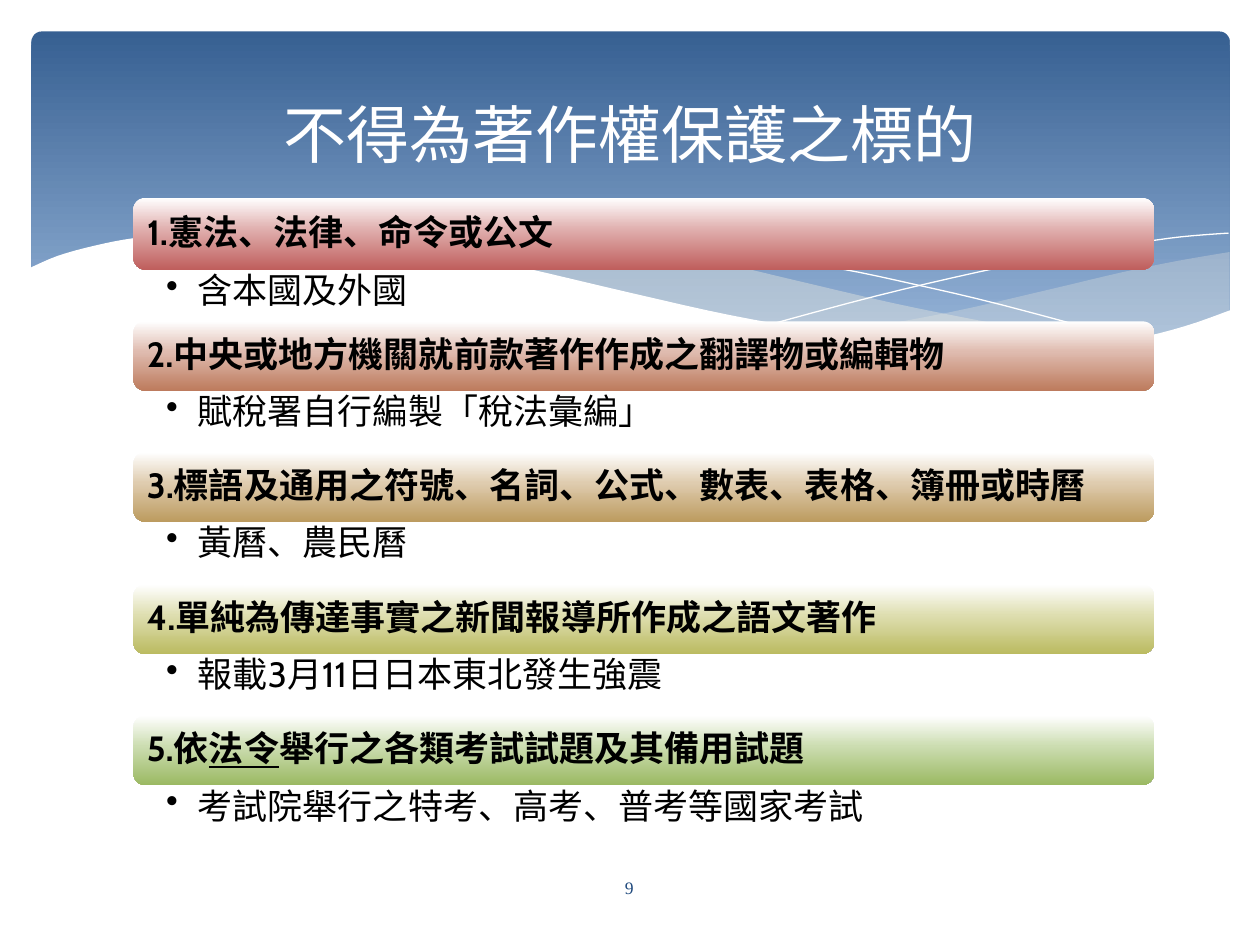
import pptx
import pptx.dml.color
import pptx.enum.shapes
import pptx.enum.text
import pptx.oxml
import pptx.oxml.ns
import pptx.util
from pptx.util import Inches

BODY_FONT = "Cabin"
CJK_FONT = "Noto Sans CJK TC"
BAR_LEFT, BAR_WIDTH = 1.06, 8.1

# top, height, heading parts (the second is underlined), detail, middle and end colour
ITEMS = [
    (1.57, 0.57, ["1.憲法、法律、命令或公文"], "含本國及外國", "E0AFAE", "BF5E5C"),
    (2.55, 0.55, ["2.中央或地方機關就前款著作作成之翻譯物或編輯物"],
     "賦稅署自行編製「稅法彙編」", "DFBBAF", "BD7B5D"),
    (3.59, 0.55, ["3.標語及通用之符號、名詞、公式、數表、表格、簿冊或時曆"],
     "黃曆、農民曆", "DFCCAF", "BC9B5F"),
    (4.64, 0.55, ["4.單純為傳達事實之新聞報導所作成之語文著作"],
     "報載3月11日日本東北發生強震", "DEDEB0", "BBBB61"),
    (5.68, 0.55, ["5.依", "法令", "舉行之各類考試試題及其備用試題"],
     "考試院舉行之特考、高考、普考等國家考試", "CCDDB1", "9BB963"),
]

RIGHT_WAVE_TOP = [(9.76, 2), (9.35, 2.07), (8.91, 2.16), (8.32, 2.3), (7.53, 2.48), (6.61, 2.65)]
RIGHT_WAVE_BOTTOM = [(6.61, 2.65), (7.05, 2.71), (7.57, 2.76), (8.03, 2.78), (8.54, 2.76),
                     (8.97, 2.7), (9.35, 2.62), (9.76, 2.47)]
LONG_WAVE_TOP = [(8.93, 2.73), (8.37, 2.65), (7.75, 2.54), (7.06, 2.4), (6.29, 2.22),
                 (5.69, 2.08), (5.14, 1.98), (4.64, 1.91), (4.2, 1.87), (3.8, 1.86),
                 (3.28, 1.87), (2.86, 1.91)]
LONG_WAVE_BOTTOM = [(2.86, 1.91), (3.42, 1.99), (4.04, 2.11), (4.91, 2.32), (5.66, 2.48),
                    (6.34, 2.61), (6.95, 2.7), (7.48, 2.76), (8.07, 2.79), (8.57, 2.77),
                    (8.93, 2.73)]
FALLING_LINE = [(3.09, 1.95), (3.43, 1.9), (3.87, 1.87), (4.5, 1.88), (5.1, 1.92), (5.82, 2),
                (6.65, 2.13), (7.27, 2.26), (7.95, 2.42), (9.07, 2.72)]
RISING_LINE = [(6.13, 2.57), (6.95, 2.35), (7.76, 2.16), (8.36, 2.04), (8.95, 1.94),
               (9.37, 1.88), (9.75, 1.85)]
WHITE_EDGE = [(9.77, 2.46), (9.4, 2.59), (8.99, 2.69), (8.5, 2.75), (8.09, 2.77), (7.61, 2.75),
              (7.08, 2.7), (6.47, 2.62), (5.79, 2.5), (5.03, 2.33), (4.18, 2.13), (3.65, 2.02),
              (3.15, 1.94), (2.71, 1.88), (2.3, 1.85), (1.93, 1.84), (1.46, 1.85), (1.06, 1.89),
              (0.75, 1.95), (0.46, 2.03), (0.23, 2.13)]


def color(value):
    return pptx.dml.color.RGBColor.from_string(value)


def smooth(points, steps=4):
    """Catmull-Rom curve through the points, as a dense list of points."""
    padded = [points[0], *points, points[-1]]
    curve = [points[0]]
    for a, b, c, d in zip(padded, padded[1:], padded[2:], padded[3:]):
        for step in range(1, steps + 1):
            t = step / steps
            curve.append(tuple(
                0.5 * (2 * q + (r - p) * t + (2 * p - 5 * q + 4 * r - s) * t ** 2
                       + (3 * q - p - 3 * r + s) * t ** 3)
                for p, q, r, s in zip(a, b, c, d)))
    return curve


def add_outline(slide, points, closed):
    (start_x, start_y), *others = [(Inches(x), Inches(y)) for x, y in points]
    builder = slide.shapes.build_freeform(start_x, start_y)
    builder.add_line_segments(others, close=closed)
    shape = builder.convert_to_shape()
    shape.shadow.inherit = False
    return shape


def add_wave(slide, points, fill, opacity=100):
    shape = add_outline(slide, points, True)
    shape.fill.solid()
    shape.fill.fore_color.rgb = color(fill)
    shape.line.fill.background()
    if opacity < 100:
        rgb = shape._element.spPr.find(".//" + pptx.oxml.ns.qn("a:srgbClr"))
        alpha = pptx.oxml.parse_xml(
            f'<a:alpha {pptx.oxml.ns.nsdecls("a")} val="{opacity * 1000}"/>')
        rgb.append(alpha)


def add_curve(slide, points):
    shape = add_outline(slide, smooth(points), False)
    shape.fill.background()
    shape.line.color.rgb = color("FFFFFF")
    shape.line.width = 0


def add_gradient_panel(slide, left, top, width, height, stops):
    """Rounded rectangle with a top-to-bottom gradient of (percent, colour) stops."""
    shape = slide.shapes.add_shape(
        pptx.enum.shapes.MSO_SHAPE.ROUNDED_RECTANGLE,
        Inches(left), Inches(top), Inches(width), Inches(height))
    shape.shadow.inherit = False
    shape.line.fill.background()
    shape.fill.gradient()
    shape.fill.gradient_angle = 270
    stop_list = shape._element.spPr.find(".//" + pptx.oxml.ns.qn("a:gsLst"))
    for stop in list(stop_list):
        stop_list.remove(stop)
    for percent, value in stops:
        stop_list.append(pptx.oxml.parse_xml(
            f'<a:gs {pptx.oxml.ns.nsdecls("a")} pos="{percent * 1000}">'
            f'<a:srgbClr val="{value}"/></a:gs>'))
    return shape


def format_run(run, size, font, value, bold=False):
    run.font.size = pptx.util.Pt(size)
    run.font.name = font
    run.font.bold = bold
    run.font.color.rgb = color(value)
    run._r.get_or_add_rPr().find(pptx.oxml.ns.qn("a:latin")).addnext(pptx.oxml.parse_xml(
        f'<a:ea {pptx.oxml.ns.nsdecls("a")} typeface="{CJK_FONT}"/>'))


def set_margins(frame, left, top, right, bottom):
    frame.word_wrap = True
    frame.margin_left, frame.margin_top = Inches(left), Inches(top)
    frame.margin_right, frame.margin_bottom = Inches(right), Inches(bottom)


def add_heading_bar(slide, top, height, parts, middle, end):
    bar = add_gradient_panel(slide, BAR_LEFT, top, BAR_WIDTH, height,
                             [(0, "FFFFFF"), (44, middle), (100, end)])
    frame = bar.text_frame
    set_margins(frame, 0.08, 0.08, 0.08, 0.08)
    frame.vertical_anchor = pptx.enum.text.MSO_ANCHOR.MIDDLE
    paragraph = frame.paragraphs[0]
    paragraph.alignment = pptx.enum.text.PP_ALIGN.LEFT
    paragraph.line_spacing = 0.9
    for index, part in enumerate(parts):
        run = paragraph.add_run()
        run.text = part
        format_run(run, 20, BODY_FONT, "000000", bold=True)
        run.font.underline = index == 1


def add_text_box(slide, left, top, width, height, text, size, font, value):
    box = slide.shapes.add_textbox(Inches(left), Inches(top), Inches(width), Inches(height))
    frame = box.text_frame
    frame.text = text
    frame.word_wrap = True
    format_run(frame.paragraphs[0].runs[0], size, font, value)
    return frame


def add_detail(slide, top, text):
    frame = add_text_box(slide, BAR_LEFT, top, BAR_WIDTH, 0.49, text, 20, BODY_FONT, "000000")
    set_margins(frame, 0.26, 0.03, 0.16, 0.03)
    paragraph = frame.paragraphs[0]
    paragraph.line_spacing = 0.9
    properties = paragraph._p.get_or_add_pPr()
    properties.set("marL", str(Inches(0.25)))
    properties.set("indent", str(-Inches(0.25)))
    properties.append(pptx.oxml.parse_xml(
        f'<a:buChar {pptx.oxml.ns.nsdecls("a")} char="•"/>'))


def add_backdrop(slide):
    panel = add_gradient_panel(slide, 0.25, 0.25, 9.51, 2.7, [(0, "376092"), (90, "95B3D7")])
    panel.adjustments[0] = 0.03
    add_wave(slide, smooth(RIGHT_WAVE_TOP) + smooth(RIGHT_WAVE_BOTTOM), "EEECE1", 29)
    add_wave(slide, smooth(LONG_WAVE_TOP) + smooth(LONG_WAVE_BOTTOM), "EEECE1", 40)
    add_curve(slide, FALLING_LINE)
    add_curve(slide, RISING_LINE)
    add_wave(slide, smooth(WHITE_EDGE) + [(0.23, 3.29), (9.77, 3.29)], "FFFFFF")


def set_title(slide, text):
    title = slide.shapes.title
    title.left, title.top = Inches(0.5), Inches(0.37)
    title.width, title.height = Inches(9), Inches(1.37)
    title.text_frame.text = text
    title.text_frame.vertical_anchor = pptx.enum.text.MSO_ANCHOR.MIDDLE
    paragraph = title.text_frame.paragraphs[0]
    paragraph.alignment = pptx.enum.text.PP_ALIGN.CENTER
    format_run(paragraph.runs[0], 36, CJK_FONT, "FFFFFF")
    slide.shapes._spTree.append(title._element)  # in front of the backdrop


def main():
    presentation = pptx.Presentation()
    presentation.slide_width, presentation.slide_height = Inches(10), Inches(7.5)
    slide = presentation.slides.add_slide(presentation.slide_layouts[5])
    add_backdrop(slide)
    for top, height, parts, detail, middle, end in ITEMS:
        add_heading_bar(slide, top, height, parts, middle, end)
        add_detail(slide, top + height, detail)
    number = add_text_box(slide, 4.36, 6.84, 1.27, 0.4, "9", 10, "Times New Roman", "1F497D")
    number.vertical_anchor = pptx.enum.text.MSO_ANCHOR.MIDDLE
    number.paragraphs[0].alignment = pptx.enum.text.PP_ALIGN.CENTER
    set_title(slide, "不得為著作權保護之標的")
    presentation.save("out.pptx")


if __name__ == "__main__":
    main()
